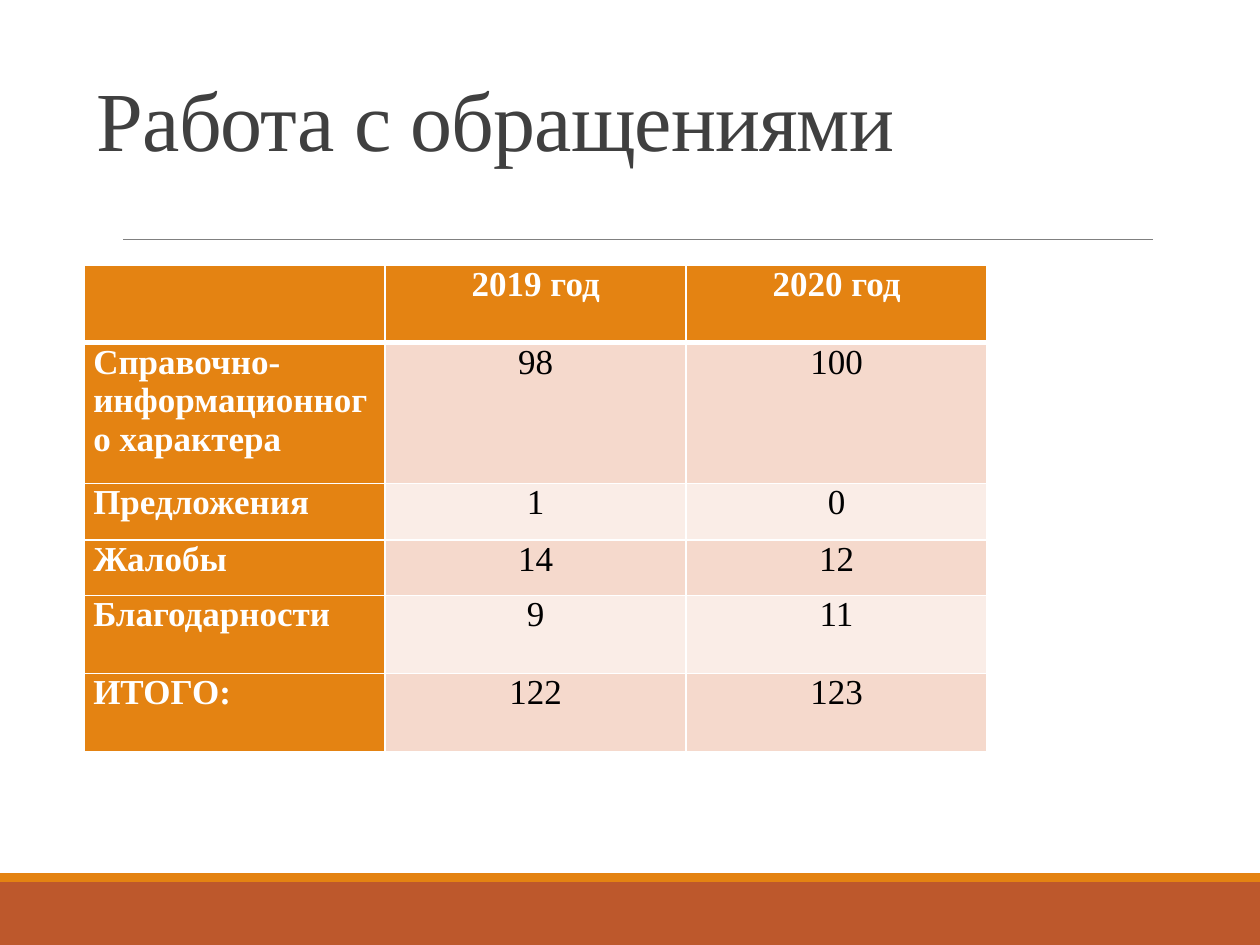
import pptx
import pptx.dml.color
import pptx.enum.shapes
import pptx.enum.text
import pptx.oxml
import pptx.oxml.ns
import pptx.util
from lxml import etree

Cm = pptx.util.Cm
Pt = pptx.util.Pt

COLORS = {
    "orange": "E48312",
    "rust": "BD582C",
    "rule": "808080",
    "title": "404040",
    "white": "FFFFFF",
    "black": "000000",
    "band_dark": "F5D9CC",
    "band_light": "FAEDE7",
}
FONT = "Times New Roman"
APPEALS = [
    ("", "2019 год", "2020 год"),
    ("Справочно-информационного характера", "98", "100"),
    ("Предложения", "1", "0"),
    ("Жалобы", "14", "12"),
    ("Благодарности", "9", "11"),
    ("ИТОГО:", "122", "123"),
]
ROW_HEIGHTS = [1.57, 2.84, 1.14, 1.4 * 0.8, 1.57, 1.57]


def rgb(name):
    """Return the palette colour of the given name."""
    return pptx.dml.color.RGBColor.from_string(COLORS[name])


def style_run(run, size, color, bold=False):
    """Format one run of text."""
    run.font.name = FONT
    run.font.size = Pt(size)
    run.font.bold = bold
    run.font.color.rgb = rgb(color)


def add_footer(slide, left, top, width, height):
    """Draw the thin orange stripe above the rust band."""
    stripe_height = 0.18
    for color, offset, depth in (
        ("rust", stripe_height, height - stripe_height),
        ("orange", 0, stripe_height),
    ):
        band = slide.shapes.add_shape(
            pptx.enum.shapes.MSO_SHAPE.RECTANGLE,
            Cm(left), Cm(top + offset), Cm(width), Cm(depth),
        )
        band.shadow.inherit = False
        band.fill.solid()
        band.fill.fore_color.rgb = rgb(color)
        band.line.fill.background()


def add_rule(slide, left, top, width):
    """Draw the thin line under the title."""
    rule = slide.shapes.add_connector(
        pptx.enum.shapes.MSO_CONNECTOR.STRAIGHT,
        Cm(left), Cm(top), Cm(left + width), Cm(top),
    )
    rule.line.color.rgb = rgb("rule")
    rule.line.width = Pt(0.5)
    etree.SubElement(
        rule.element.find(pptx.oxml.ns.qn("p:spPr")),
        pptx.oxml.ns.qn("a:effectLst"),
    )


def place_title(slide, left, top, width, height):
    """Move and format the title placeholder."""
    title = slide.shapes.title
    title.left, title.top = Cm(left), Cm(top)
    title.width, title.height = Cm(width), Cm(height)
    frame = title.text_frame
    frame.text = "Работа с обращениями"
    frame.word_wrap = True
    frame.auto_size = pptx.enum.text.MSO_AUTO_SIZE.NONE
    frame.vertical_anchor = pptx.enum.text.MSO_ANCHOR.BOTTOM
    heading = frame.paragraphs[0]
    heading.alignment = pptx.enum.text.PP_ALIGN.LEFT
    heading.line_spacing = 0.85
    style_run(heading.runs[0], 48, "title")
    heading.runs[0].font._element.set("spc", "-50")


def set_borders(cell, top, bottom):
    """Give a cell white borders with the given top and bottom widths."""
    properties = cell._tc.get_or_add_tcPr()
    for side, points in (("L", 1), ("R", 1), ("T", top), ("B", bottom)):
        border = etree.SubElement(
            properties, pptx.oxml.ns.qn("a:ln" + side), w=str(Pt(points))
        )
        fill = etree.SubElement(border, pptx.oxml.ns.qn("a:solidFill"))
        etree.SubElement(
            fill, pptx.oxml.ns.qn("a:srgbClr"), val=COLORS["white"]
        )


def format_cell(cell, row, column):
    """Format a cell by its place in the table."""
    is_header = row == 0 or column == 0
    set_borders(cell, 3 if row == 1 else 1, 3 if row == 0 else 1)
    cell.fill.solid()
    band = "band_dark" if row % 2 else "band_light"
    cell.fill.fore_color.rgb = rgb("orange" if is_header else band)
    cell.margin_left = cell.margin_right = Cm(0.18)
    cell.margin_top = cell.margin_bottom = 0
    paragraph = cell.text_frame.paragraphs[0]
    align = pptx.enum.text.PP_ALIGN
    paragraph.alignment = align.CENTER if column else align.LEFT
    for run in paragraph.runs:
        style_run(run, 20, "white" if is_header else "black", is_header)


def add_appeals(slide, left, top, width):
    """Build the table of appeals by kind and year."""
    columns = len(APPEALS[0])
    appeals = slide.shapes.add_table(
        len(APPEALS), columns,
        Cm(left), Cm(top), Cm(width), Cm(sum(ROW_HEIGHTS)),
    ).table
    for column in appeals.columns:
        column.width = Cm(width / columns)
    for row, values in enumerate(APPEALS):
        appeals.rows[row].height = Cm(ROW_HEIGHTS[row])
        for column, value in enumerate(values):
            cell = appeals.cell(row, column)
            cell.text_frame.text = value
            format_cell(cell, row, column)


def main():
    """Build and save the slide."""
    deck = pptx.Presentation()
    deck.slide_width, deck.slide_height = Cm(25.4), Cm(19.05)
    slide = deck.slides.add_slide(deck.slide_layouts[5])
    add_footer(slide, 0, 17.6, 25.4, 1.45)
    add_rule(slide, 2.48, 4.83, 20.76)
    place_title(slide, 1.7, 1.32, 18.31, 2.21)
    add_appeals(slide, 1.7, 5.34, 18.2)
    deck.save("out.pptx")


if __name__ == "__main__":
    main()
